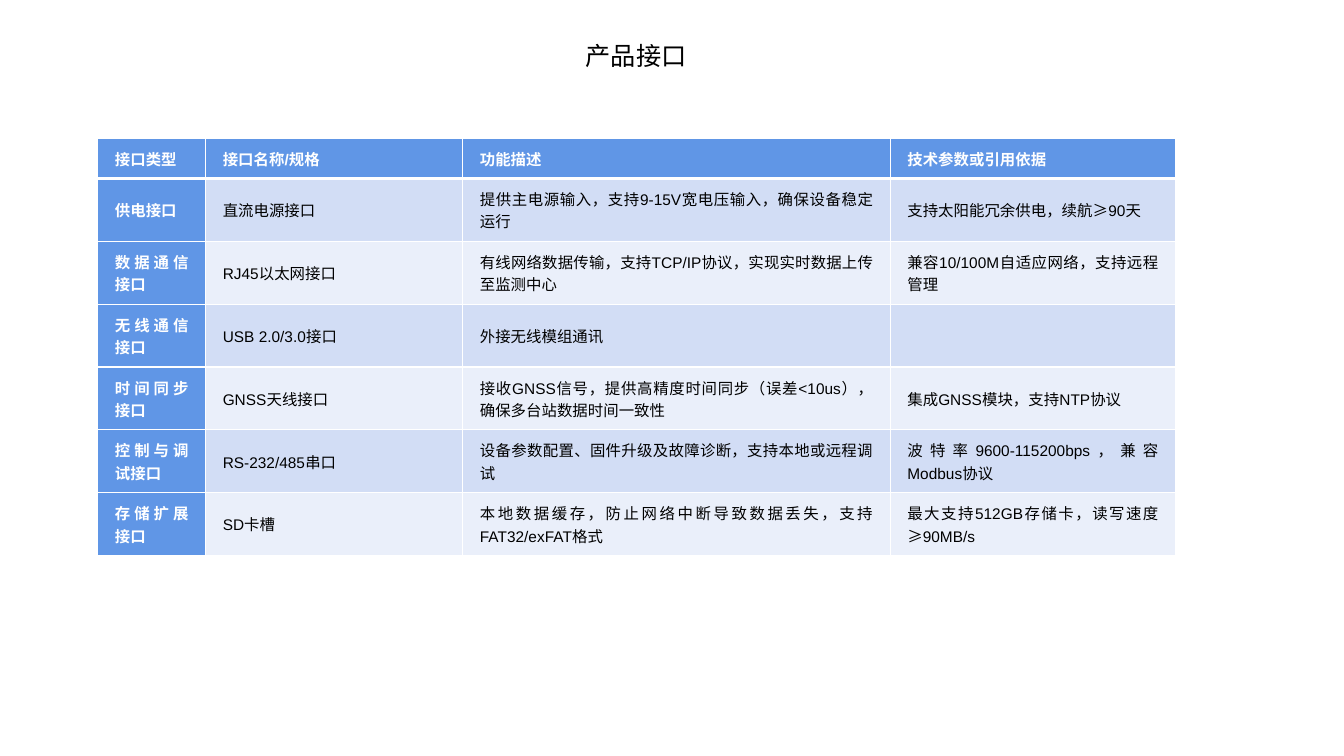
from pptx import Presentation
from pptx.dml.color import RGBColor
from pptx.enum.lang import MSO_LANGUAGE_ID
from pptx.enum.text import MSO_ANCHOR, MSO_AUTO_SIZE, PP_ALIGN
from pptx.oxml.ns import qn
from pptx.util import Inches, Pt
from lxml.etree import SubElement


class Theme:
    font = "Arial"
    title = 18
    body = 11
    black = "000000"
    white = "FFFFFF"
    head = "6096E6"
    bands = ("D2DDF5", "EAEFFA")
    thin = 1
    thick = 3


class Deck:
    def __init__(self, theme):
        self.theme = theme
        self.prs = Presentation()
        self.prs.slide_width = Inches(13.33)
        self.prs.slide_height = Inches(7.5)
        self.slide = self.prs.slides.add_slide(self.prs.slide_layouts[6])

    def style(self, frame, size, color, bold=False):
        for para in frame.paragraphs:
            for run in para.runs:
                font = run.font
                font.name = self.theme.font
                font.size = Pt(size)
                font.bold = bold
                font.color.rgb = RGBColor.from_string(color)
                font.language_id = MSO_LANGUAGE_ID.SIMPLIFIED_CHINESE

    def title(self, text, left, top, width, height):
        box = self.slide.shapes.add_textbox(
            Inches(left), Inches(top), Inches(width), Inches(height))
        frame = box.text_frame
        frame.word_wrap = False
        frame.auto_size = MSO_AUTO_SIZE.SHAPE_TO_FIT_TEXT
        frame.text = text
        self.style(frame, self.theme.title, self.theme.black)

    def edge(self, cell, side, width):
        props = cell._tc.get_or_add_tcPr()
        line = SubElement(props, qn("a:" + side), w=str(Pt(width)))
        fill = SubElement(line, qn("a:solidFill"))
        SubElement(fill, qn("a:srgbClr"), val=self.theme.white)

    def cell(self, cell, text, row, col):
        theme = self.theme
        label = row == 0 or col == 0
        # Borders: a thick rule parts the header from the body
        for side in ("lnL", "lnR", "lnT", "lnB"):
            rule = (row, side) in ((0, "lnB"), (1, "lnT"))
            self.edge(cell, side, theme.thick if rule else theme.thin)
        # Fill: header row and label column, then banded rows
        color = theme.head if label else theme.bands[(row - 1) % 2]
        cell.fill.solid()
        cell.fill.fore_color.rgb = RGBColor.from_string(color)
        # Text
        cell.margin_left = cell.margin_right = Inches(0.17)
        cell.margin_top = cell.margin_bottom = Inches(0.09)
        cell.vertical_anchor = MSO_ANCHOR.MIDDLE
        if text:
            frame = cell.text_frame
            frame.text = text
            frame.paragraphs[0].alignment = PP_ALIGN.JUSTIFY
            self.style(frame, theme.body,
                       theme.white if label else theme.black, label)

    def table(self, data, left, top, widths, heights):
        table = self.slide.shapes.add_table(
            len(data), len(widths), Inches(left), Inches(top),
            Inches(sum(widths)), Inches(sum(heights))).table
        for col, width in zip(table.columns, widths):
            col.width = Inches(width)
        for row, height in zip(table.rows, heights):
            row.height = Inches(height)
        for r, texts in enumerate(data):
            for c, text in enumerate(texts):
                self.cell(table.cell(r, c), text, r, c)


PORTS = [
    ("接口类型", "接口名称/规格", "功能描述", "技术参数或引用依据"),
    ("供电接口", "直流电源接口",
     "提供主电源输入，支持9-15V宽电压输入，确保设备稳定运行",
     "支持太阳能冗余供电，续航≥90天"),
    ("数据通信接口", "RJ45以太网接口",
     "有线网络数据传输，支持TCP/IP协议，实现实时数据上传至监测中心",
     "兼容10/100M自适应网络，支持远程管理"),
    ("无线通信接口", "USB 2.0/3.0接口", "外接无线模组通讯", ""),
    ("时间同步接口", "GNSS天线接口",
     "接收GNSS信号，提供高精度时间同步（误差<10us），确保多台站数据时间一致性",
     "集成GNSS模块，支持NTP协议"),
    ("控制与调试接口", "RS-232/485串口",
     "设备参数配置、固件升级及故障诊断，支持本地或远程调试",
     "波特率9600-115200bps，兼容Modbus协议"),
    ("存储扩展接口", "SD卡槽",
     "本地数据缓存，防止网络中断导致数据丢失，支持FAT32/exFAT格式",
     "最大支持512GB存储卡，读写速度≥90MB/s"),
]


def main():
    deck = Deck(Theme())
    # Table of ports
    deck.table(PORTS, 0.97, 1.37, (1.07, 2.55, 4.24, 2.83),
               [0.39] + [0.55] * (len(PORTS) - 1))
    # Slide title
    deck.title("产品接口", 5.71, 0.35, 1.21, 0.4)
    deck.prs.save("out.pptx")


if __name__ == "__main__":
    main()
